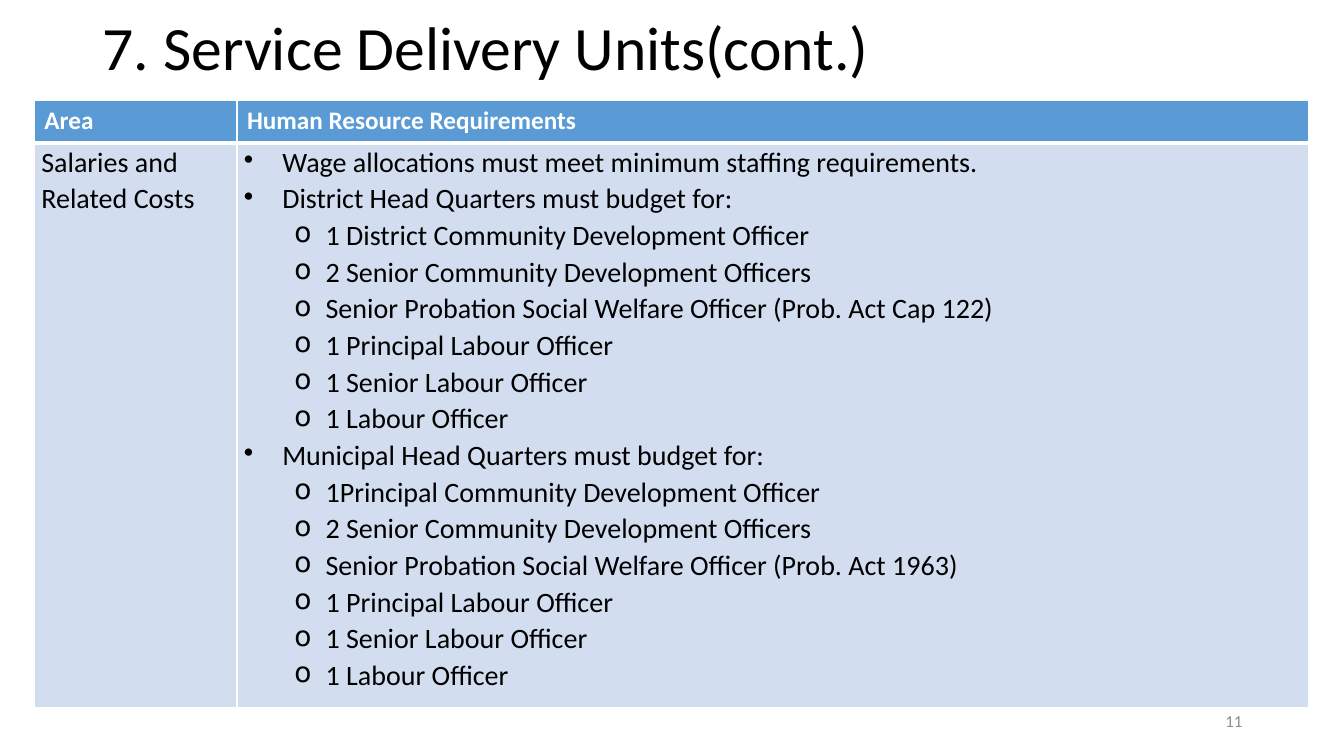
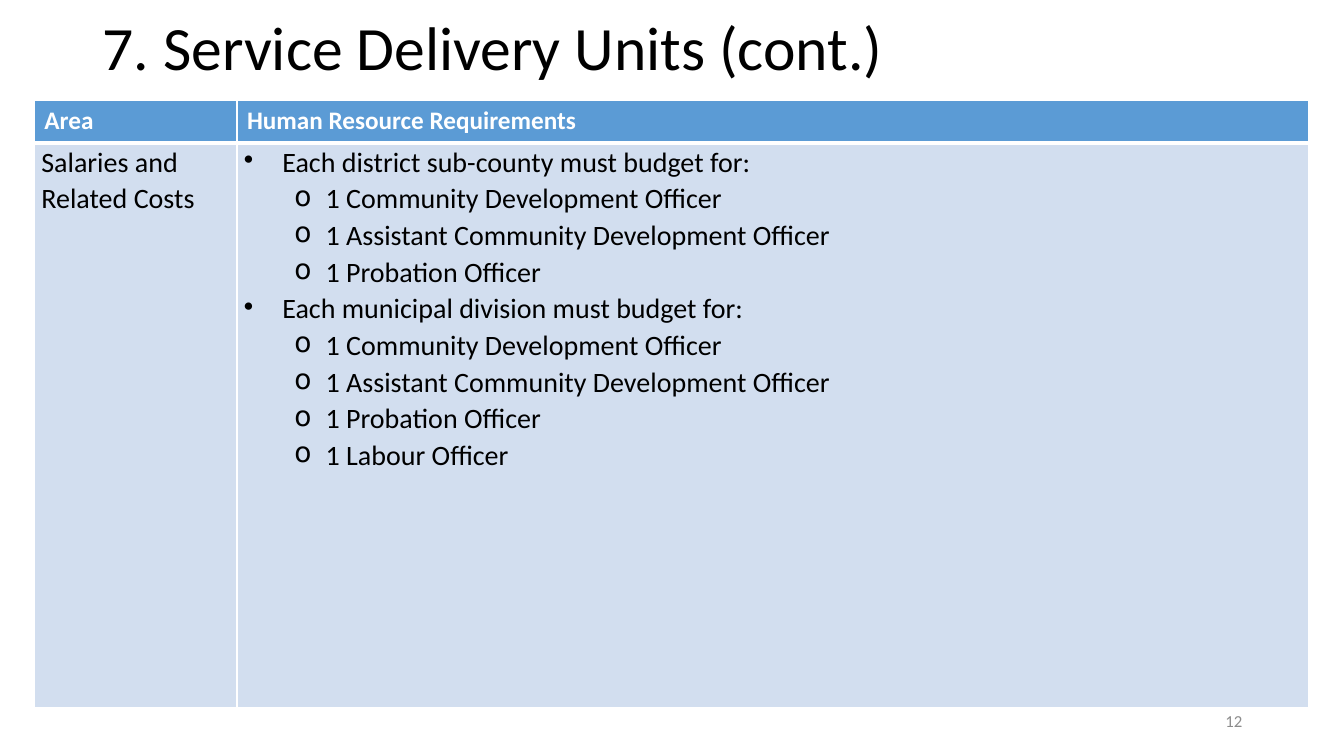
from dataclasses import dataclass

from lxml.etree import SubElement
from pptx import Presentation
from pptx.dml.color import RGBColor
from pptx.enum.text import MSO_ANCHOR as Anchor, PP_ALIGN as Align
from pptx.oxml.ns import qn
from pptx.util import Inches, Pt

FONT = "Calibri"
COLORS = {
    "ink": "000000",
    "paper": "FFFFFF",
    "header": "5B9BD5",
    "body": "D2DEEF",
    "number": "8C8C8C",
}
SLIDE_SIZE = (13.33, 7.5)
TITLE_AREA = (0.92, 0.12, 11.5, 0.77)
NUMBER_AREA = (9.42, 6.95, 3, 0.4)
TABLE_ORIGIN = (0.34, 1)
COLUMNS = (2.01, 10.63)
ROWS = (0.42, 5.6)
HEADINGS = ("Area", "Human Resource Requirements")
AREA = "Salaries and Related Costs"


@dataclass(frozen=True)
class TextStyle:
    size: float
    color: str
    bold: bool = False
    spacing: float = 1.0
    align: Align = Align.LEFT


@dataclass(frozen=True)
class Bullet:
    symbol: str
    left: float
    hanging: float
    level: int


@dataclass(frozen=True)
class Group:
    heading: str
    posts: tuple[str, ...] = ()


@dataclass(frozen=True)
class Page:
    title: str
    number: int
    groups: tuple[Group, ...]


TITLE = TextStyle(44, "ink", spacing=0.9)
HEADER = TextStyle(18, "paper", bold=True)
BODY = TextStyle(20, "ink", spacing=1.07)
NUMBER = TextStyle(12, "number", align=Align.RIGHT)
DOT = Bullet("•", 0.38, 0.38, 0)
RING = Bullet("o", 0.81, 0.31, 1)

LABOUR_POSTS = ("1 Principal Labour Officer", "1 Senior Labour Officer", "1 Labour Officer")
COMMUNITY_POSTS = (
    "1 Community Development Officer",
    "1 Assistant Community Development Officer",
    "1 Probation Officer",
)
PAGES = (
    Page("7. Service Delivery Units(cont.)", 11, (
        Group("Wage allocations must meet minimum staffing requirements."),
        Group("District Head Quarters must budget for:", (
            "1 District Community Development Officer",
            "2 Senior Community Development Officers",
            "Senior Probation Social Welfare Officer (Prob. Act Cap 122)",
            *LABOUR_POSTS,
        )),
        Group("Municipal Head Quarters must budget for:", (
            "1Principal Community Development Officer",
            "2 Senior Community Development Officers",
            "Senior Probation Social Welfare Officer (Prob. Act 1963)",
            *LABOUR_POSTS,
        )),
    )),
    Page("7. Service Delivery Units (cont.)", 12, (
        Group("Each district sub-county must budget for:", COMMUNITY_POSTS),
        Group("Each municipal division must budget for:", (*COMMUNITY_POSTS, "1 Labour Officer")),
    )),
)


def rgb(name: str) -> RGBColor:
    return RGBColor.from_string(COLORS[name])


def write(para, text: str, style: TextStyle, bullet: Bullet | None = None) -> None:
    para.text = text
    para.alignment = style.align
    para.line_spacing = style.spacing
    if bullet:
        para.level = bullet.level
        props = para._p.get_or_add_pPr()
        props.set("marL", str(Inches(bullet.left)))
        props.set("indent", str(-Inches(bullet.hanging)))
        SubElement(props, qn("a:buChar")).set("char", bullet.symbol)
    font = para.font
    font.name, font.size, font.bold = FONT, Pt(style.size), style.bold
    font.color.rgb = rgb(style.color)


def add_text(slide, area: tuple[float, ...], text: str, style: TextStyle) -> None:
    box = slide.shapes.add_textbox(*map(Inches, area))
    box.text_frame.word_wrap = True
    box.text_frame.vertical_anchor = Anchor.MIDDLE
    write(box.text_frame.paragraphs[0], text, style)


def style_cell(cell, fill: str, bottom: float) -> None:
    # Borders precede the fill in the cell properties
    props = cell._tc.get_or_add_tcPr()
    for side, width in (("L", 1), ("R", 1), ("T", 1), ("B", bottom)):
        line = SubElement(props, qn(f"a:ln{side}"), w=str(Pt(width)))
        solid = SubElement(line, qn("a:solidFill"))
        SubElement(solid, qn("a:srgbClr"), val=COLORS["paper"])
    cell.fill.solid()
    cell.fill.fore_color.rgb = rgb(fill)


def add_requirements(slide, groups: tuple[Group, ...]) -> None:
    size = (sum(COLUMNS), sum(ROWS))
    frame = slide.shapes.add_table(len(ROWS), len(COLUMNS), *map(Inches, TABLE_ORIGIN + size))
    table = frame.table
    table.horz_banding = False
    for column, width in zip(table.columns, COLUMNS):
        column.width = Inches(width)
    for row, height in zip(table.rows, ROWS):
        row.height = Inches(height)

    # Header row
    for index, heading in enumerate(HEADINGS):
        cell = table.cell(0, index)
        style_cell(cell, "header", bottom=3)
        write(cell.text_frame.paragraphs[0], heading, HEADER)

    # Body row
    area, details = table.cell(1, 0), table.cell(1, 1)
    for cell in (area, details):
        style_cell(cell, "body", bottom=1)
        cell.margin_left = cell.margin_right = Inches(0.07)
        cell.margin_top = cell.margin_bottom = 0
    write(area.text_frame.paragraphs[0], AREA, BODY)
    lines = [
        line
        for group in groups
        for line in ((group.heading, DOT), *((post, RING) for post in group.posts))
    ]
    text = details.text_frame
    for index, (wording, bullet) in enumerate(lines):
        para = text.add_paragraph() if index else text.paragraphs[0]
        write(para, wording, BODY, bullet)


def main() -> None:
    deck = Presentation()
    deck.slide_width, deck.slide_height = map(Inches, SLIDE_SIZE)
    blank = deck.slide_layouts[6]
    for page in PAGES:
        slide = deck.slides.add_slide(blank)
        add_text(slide, TITLE_AREA, page.title, TITLE)
        add_requirements(slide, page.groups)
        add_text(slide, NUMBER_AREA, str(page.number), NUMBER)
    deck.save("out.pptx")


if __name__ == "__main__":
    main()
